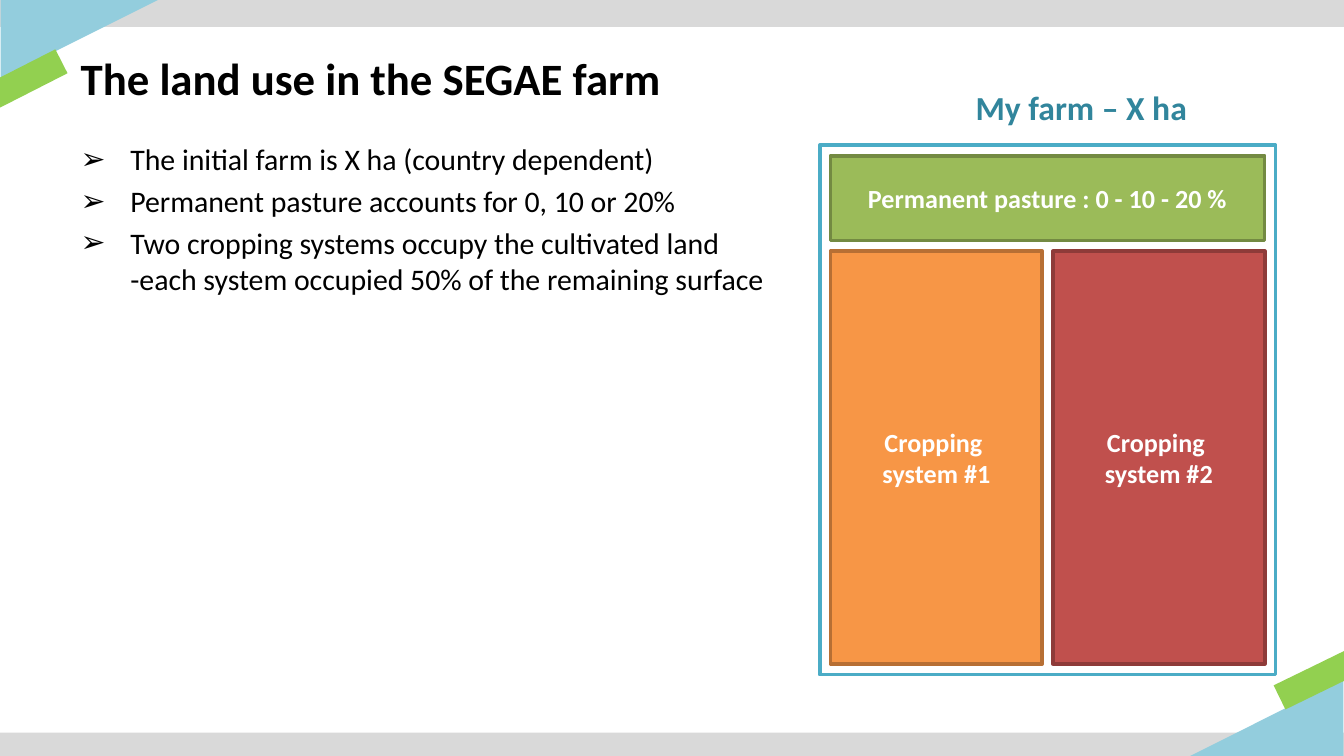
"""Build the slide on land use in the SEGAE farm."""
import lxml.etree
import pptx
import pptx.dml.color
import pptx.enum.shapes
import pptx.enum.text
import pptx.oxml.ns
import pptx.util

Inches, Pt = pptx.util.Inches, pptx.util.Pt
MSO = pptx.enum.shapes.MSO_SHAPE
ALIGN = pptx.enum.text.PP_ALIGN
ANCHOR = pptx.enum.text.MSO_ANCHOR

THEME = {
    "font": "Calibri",
    "title": 24, "heading": 18, "body": 16, "label": 14, "line": 2,
    "black": "000000", "white": "FFFFFF", "teal": "31859C", "frame": "4BACC6",
    "gray": "D9D9D9", "blue": "93CDDD", "lime": "92D050",
    "pasture": ("9BBB59", "738A42"),
    "crop1": ("F79646", "B76F34"),
    "crop2": ("C0504D", "8E3B39"),
}

TITLE = "The land use in the SEGAE farm"
HEADING = "My farm – X ha"
BULLETS = [
    "The initial farm is X ha (country dependent)",
    "Permanent pasture accounts for 0, 10 or 20%",
    "Two cropping systems occupy the cultivated land "
    "-each system occupied 50% of the remaining surface",
]
PASTURE = "Permanent pasture : 0 - 10 - 20 %"
CROPS = [("Cropping \nsystem #1", "crop1"), ("Cropping \nsystem #2", "crop2")]

DECOR = [
    (MSO.RECTANGLE, (0, 0, 10, 0.2), 0, "gray"),
    (MSO.ISOSCELES_TRIANGLE, (0.3, -0.3, 0.59, 1.18), 90, "blue"),
    (MSO.RECTANGLE, (-0.1, 0.49, 0.59, 0.2), 333, "lime"),
    (MSO.RECTANGLE, (0, 5.45, 10, 0.2), 180, "gray"),
    (MSO.ISOSCELES_TRIANGLE, (9.11, 4.76, 0.59, 1.18), 270, "blue"),
    (MSO.RECTANGLE, (9.49, 4.96, 0.59, 0.2), 154, "lime"),
]
WIDTH = 10
FARM = (6.1, 1.08, 3.39, 3.94)
GAP = 0.08
PASTURE_H = 0.63
INDENT = 0.37


def rgb(value):
    return pptx.dml.color.RGBColor.from_string(value)


def add_text(p, text, size, color, bold=False):
    for i, part in enumerate(text.split("\n")):
        if i:
            p.add_line_break()
        r = p.add_run()
        r.text = part
        r.font.name, r.font.size, r.font.bold = THEME["font"], Pt(THEME[size]), bold
        r.font.color.rgb = rgb(THEME[color])


def add_box(s, kind, box, fill, line=None):
    sp = s.shapes.add_shape(kind, *map(Inches, box))
    sp.shadow.inherit = False
    sp.fill.solid()
    sp.fill.fore_color.rgb = rgb(fill)
    if line:
        sp.line.color.rgb = rgb(line)
        sp.line.width = Pt(THEME["line"])
    else:
        sp.line.fill.background()
    return sp


def add_plot(s, box, text, style):
    sp = add_box(s, MSO.RECTANGLE, box, *THEME[style])
    tf = sp.text_frame
    tf.word_wrap = True
    tf.vertical_anchor = ANCHOR.MIDDLE
    p = tf.paragraphs[0]
    p.alignment = ALIGN.CENTER
    add_text(p, text, "label", "white", True)


def place(sp, box, anchor):
    sp.left, sp.top, sp.width, sp.height = map(Inches, box)
    tf = sp.text_frame
    tf.word_wrap = True
    tf.auto_size = pptx.enum.text.MSO_AUTO_SIZE.NONE
    tf.vertical_anchor = anchor
    return tf


def add_bullet(p, text):
    p.alignment = ALIGN.LEFT
    p.space_before = Pt(THEME["body"] * 0.2)
    pPr = p._p.get_or_add_pPr()
    pPr.set("marL", str(Inches(INDENT)))
    pPr.set("indent", str(-Inches(INDENT)))
    lxml.etree.SubElement(pPr, pptx.oxml.ns.qn("a:buChar")).set("char", "➢")
    add_text(p, text, "body", "black")


def add_farm(s):
    x, y, w, h = FARM
    add_box(s, MSO.RECTANGLE, FARM, THEME["white"], THEME["frame"])
    add_plot(s, (x + GAP, y + GAP, w - 2 * GAP, PASTURE_H), PASTURE, "pasture")
    crop_w = (w - 3 * GAP) / len(CROPS)
    crop_y = y + PASTURE_H + 2 * GAP
    crop_h = h - PASTURE_H - 3 * GAP
    for i, (text, style) in enumerate(CROPS):
        add_plot(s, (x + GAP + i * (crop_w + GAP), crop_y, crop_w, crop_h), text, style)
    tf = s.shapes.add_textbox(*map(Inches, (7.16, 0.6, 1.79, 0.4))).text_frame
    tf.word_wrap = False
    tf.auto_size = pptx.enum.text.MSO_AUTO_SIZE.SHAPE_TO_FIT_TEXT
    add_text(tf.paragraphs[0], HEADING, "heading", "teal", True)


def main():
    prs = pptx.Presentation()
    prs.slide_width, prs.slide_height = Inches(WIDTH), Inches(WIDTH * 9 / 16)
    s = prs.slides.add_slide(prs.slide_layouts[1])
    for kind, box, angle, color in DECOR:
        sp = add_box(s, kind, box, THEME[color])
        sp.rotation = angle
        if kind == MSO.ISOSCELES_TRIANGLE:
            sp.adjustments[0] = 0
    tf = place(s.shapes.title, (0.5, 0.23, 9, 0.7), ANCHOR.MIDDLE)
    tf.paragraphs[0].alignment = ALIGN.LEFT
    add_text(tf.paragraphs[0], TITLE, "title", "black", True)
    add_farm(s)
    tf = place(s.placeholders[1], (0.5, 1, 5.44, 4.02), ANCHOR.TOP)
    for i, text in enumerate(BULLETS):
        add_bullet(tf.add_paragraph() if i else tf.paragraphs[0], text)
    prs.save("out.pptx")


if __name__ == "__main__":
    main()
